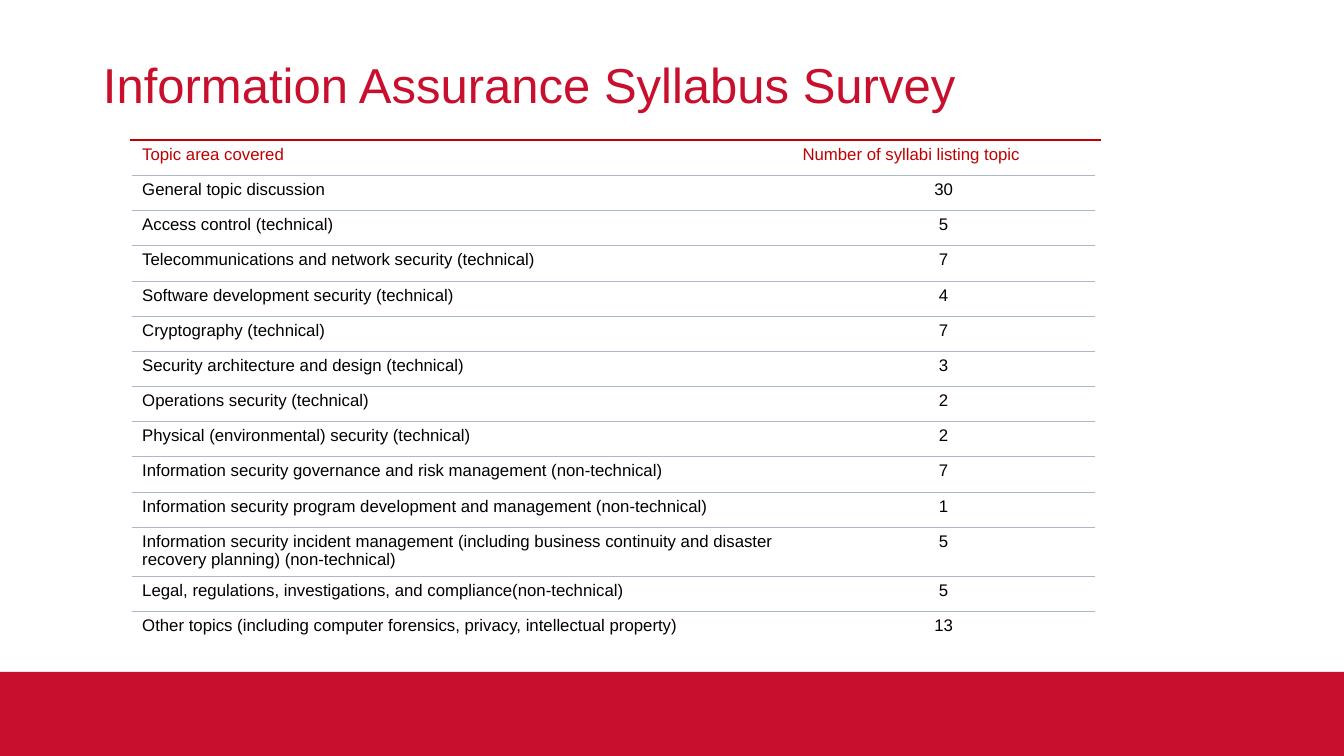
import pptx
import pptx.dml.color
import pptx.enum.shapes
import pptx.enum.text
import pptx.oxml
import pptx.oxml.ns
import pptx.util
from pptx.util import Cm

RED = pptx.dml.color.RGBColor(0xC8, 0x10, 0x2E)
DARK_RED = pptx.dml.color.RGBColor(0xC0, 0x00, 0x00)
BLACK = pptx.dml.color.RGBColor(0x00, 0x00, 0x00)
GRID = pptx.dml.color.RGBColor(0xAD, 0xB9, 0xCA)
FONT = "Arial"
HEADER = ("Topic area covered", "Number of syllabi listing topic")
TOPICS = [
    ("General topic discussion", 30),
    ("Access control (technical)", 5),
    ("Telecommunications and network security (technical)", 7),
    ("Software development security (technical)", 4),
    ("Cryptography (technical)", 7),
    ("Security architecture and design (technical)", 3),
    ("Operations security (technical)", 2),
    ("Physical (environmental) security (technical)", 2),
    ("Information security governance and risk management (non-technical)", 7),
    ("Information security program development and management (non-technical)", 1),
    ("Information security incident management (including business continuity "
     "and disaster recovery planning) (non-technical)", 5),
    ("Legal, regulations, investigations, and compliance(non-technical)", 5),
    ("Other topics (including computer forensics, privacy, intellectual property)", 13),
]
TALL_ROW = 11


def add_run(paragraph, text, size, color):
    run = paragraph.add_run()
    run.text = text
    run.font.name = FONT
    run.font.size = pptx.util.Pt(size)
    run.font.color.rgb = color


def set_borders(cell, visible_sides):
    properties = cell._tc.get_or_add_tcPr()
    for index, side in enumerate("LRTB"):
        if side in visible_sides:
            width = pptx.util.Pt(0.25)
            paint = f'<a:solidFill><a:srgbClr val="{GRID}"/></a:solidFill>'
        else:
            width = 0
            paint = "<a:noFill/>"
        border = pptx.oxml.parse_xml(
            f'<a:ln{side} {pptx.oxml.ns.nsdecls("a")} w="{width}">{paint}</a:ln{side}>'
        )
        properties.insert(index, border)


def place_title(slide, left, top, width, height):
    title = slide.shapes.title
    title.left, title.top, title.width, title.height = left, top, width, height
    frame = title.text_frame
    frame.word_wrap = True
    frame.vertical_anchor = pptx.enum.text.MSO_ANCHOR.MIDDLE
    paragraph = frame.paragraphs[0]
    paragraph.alignment = pptx.enum.text.PP_ALIGN.LEFT
    add_run(paragraph, "Information Assurance Syllabus Survey", 35, RED)


def add_footer_band(slide, left, top, width, height):
    band = slide.shapes.add_shape(
        pptx.enum.shapes.MSO_SHAPE.RECTANGLE, left, top, width, height
    )
    band.shadow.inherit = False
    band.fill.solid()
    band.fill.fore_color.rgb = RED
    band.line.fill.background()


def add_survey_table(slide, left, top, width, height):
    rows = [HEADER] + TOPICS
    last_row = len(rows) - 1
    table = slide.shapes.add_table(len(rows), 2, left, top, width, height).table
    table.first_row = False
    table.horz_banding = False
    table.columns[1].width = Cm(7.62)
    table.columns[0].width = width - Cm(7.62)
    tall_height = Cm(1.25)
    short_height = (height - tall_height) // last_row
    for row_index, values in enumerate(rows):
        table.rows[row_index].height = tall_height if row_index == TALL_ROW else short_height
        sides = {0: "B", last_row: "T"}.get(row_index, "TB")
        for column_index, value in enumerate(values):
            cell = table.cell(row_index, column_index)
            cell.fill.background()
            set_borders(cell, sides)
            paragraph = cell.text_frame.paragraphs[0]
            if row_index and column_index:
                paragraph.alignment = pptx.enum.text.PP_ALIGN.CENTER
            add_run(paragraph, str(value), 12, BLACK if row_index else DARK_RED)


def add_top_rule(slide, left, top, width):
    rule = slide.shapes.add_connector(
        pptx.enum.shapes.MSO_CONNECTOR.STRAIGHT, left, top, left + width, top
    )
    rule.line.color.rgb = DARK_RED
    rule.line.width = pptx.util.Pt(1.75)
    rule._element.spPr.append(
        pptx.oxml.parse_xml(f'<a:effectLst {pptx.oxml.ns.nsdecls("a")}/>')
    )


def main():
    presentation = pptx.Presentation()
    presentation.slide_width = Cm(33.87)
    presentation.slide_height = Cm(19.05)
    slide = presentation.slides.add_slide(presentation.slide_layouts[5])
    band_height = Cm(2.12)
    add_footer_band(
        slide, 0, presentation.slide_height - band_height,
        presentation.slide_width, band_height,
    )
    place_title(slide, Cm(2.34), Cm(1.02), Cm(30.78), Cm(2.18))
    table_top = Cm(3.53)
    add_survey_table(slide, Cm(3.33), table_top, Cm(24.26), Cm(12.78))
    add_top_rule(slide, Cm(3.28), table_top, Cm(24.46))
    presentation.save("out.pptx")


if __name__ == "__main__":
    main()
